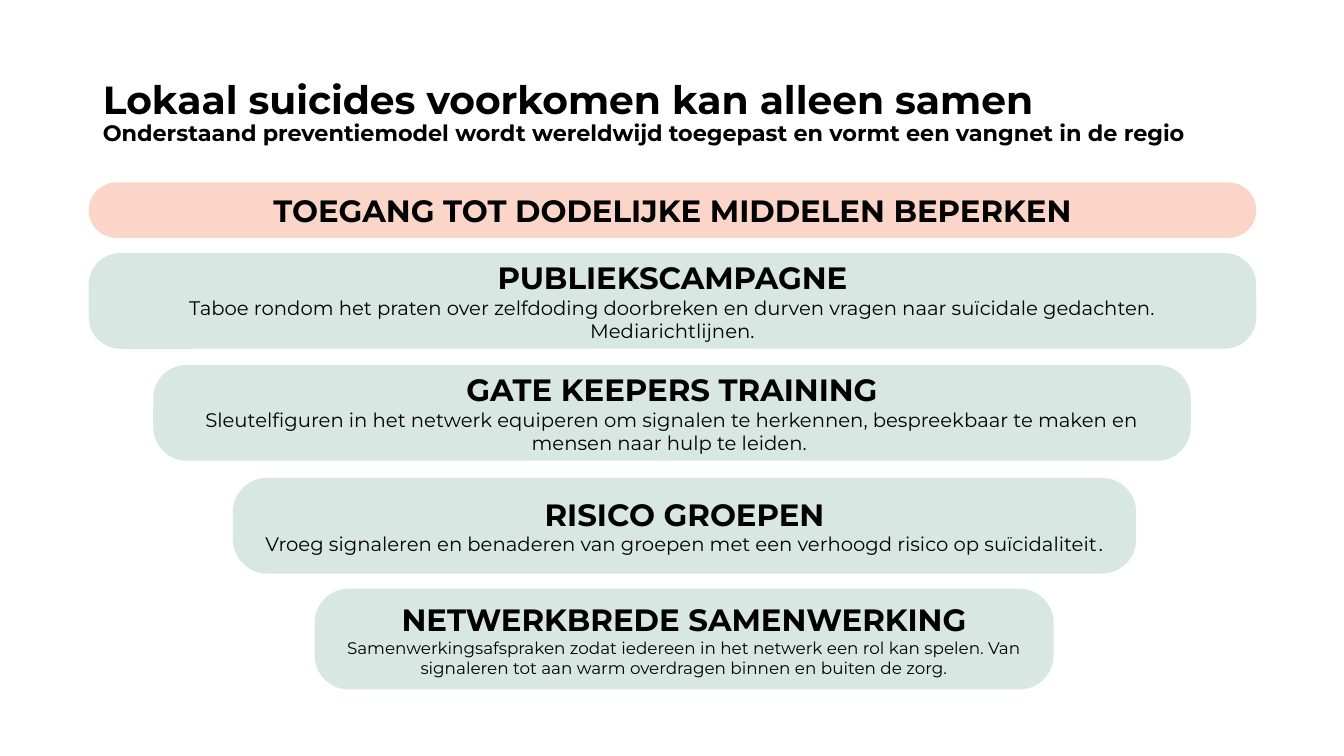
from pptx import Presentation
from pptx.dml.color import RGBColor
from pptx.enum.shapes import MSO_SHAPE
from pptx.enum.text import MSO_ANCHOR, MSO_AUTO_SIZE, PP_ALIGN
from pptx.util import Inches, Pt

BLACK = RGBColor(0x00, 0x00, 0x00)
GREEN = RGBColor(0xD9, 0xE7, 0xE3)
PINK = RGBColor(0xFB, 0xD5, 0xC8)
FONT = "Montserrat"
ROUNDED = MSO_SHAPE.ROUNDED_RECTANGLE
MIDDLE = MSO_ANCHOR.MIDDLE
CENTER, LEFT = PP_ALIGN.CENTER, PP_ALIGN.LEFT
TITLE_ONLY = 5


def format_paragraph(paragraph, size, bold, alignment):
    paragraph.alignment = alignment
    paragraph.font.name = FONT
    paragraph.font.size = Pt(size)
    paragraph.font.bold = bold
    paragraph.font.color.rgb = BLACK


presentation = Presentation()
presentation.slide_width = Inches(13.33)
presentation.slide_height = Inches(7.5)
slide = presentation.slides.add_slide(presentation.slide_layouts[TITLE_ONLY])

title = slide.shapes.title
title.left, title.top = Inches(0.92), Inches(0.4)
title.width, title.height = Inches(11.5), Inches(1.45)
title.text_frame.word_wrap = True
title.text_frame.auto_size = MSO_AUTO_SIZE.NONE
title.text_frame.vertical_anchor = MIDDLE
heading = title.text_frame.paragraphs[0]
heading.line_spacing = 0.9
format_paragraph(heading, 28, True, LEFT)
heading.add_run().text = "Lokaal suicides voorkomen kan alleen samen"
heading.add_line_break()
subtitle = heading.add_run()
subtitle.text = "Onderstaand preventiemodel wordt wereldwijd toegepast en vormt een vangnet in de regio"
subtitle.font.size = Pt(16)

# left, top, width, height, corner, fill, heading, description, description size
layers = [
    (0.88, 1.81, 11.58, 0.55, 0.5, PINK,
     "TOEGANG TOT DODELIJKE MIDDELEN BEPERKEN", None, None),
    (0.88, 2.51, 11.58, 0.95, 0.33, GREEN, "PUBLIEKSCAMPAGNE",
     "Taboe rondom het praten over zelfdoding doorbreken en durven vragen naar "
     "suïcidale gedachten. Mediarichtlijnen.", 14),
    (1.52, 3.62, 10.29, 0.95, 0.35, GREEN, "GATE KEEPERS TRAINING",
     "Sleutelfiguren in het netwerk equiperen om signalen te herkennen, "
     "bespreekbaar te maken en mensen naar hulp te leiden. ", 14),
    (2.31, 4.74, 8.96, 0.95, 0.36, GREEN, "RISICO GROEPEN",
     "Vroeg signaleren en benaderen van groepen met een verhoogd risico op "
     "suïcidaliteit", 14),
    (3.12, 5.84, 7.33, 1, 0.34, GREEN, "NETWERKBREDE SAMENWERKING",
     "Samenwerkingsafspraken zodat iedereen in het netwerk een rol kan spelen. "
     "Van signaleren tot aan warm overdragen binnen en buiten de zorg.", 12),
]

for left, top, width, height, corner, fill, name, description, size in layers:
    layer = slide.shapes.add_shape(
        ROUNDED, Inches(left), Inches(top), Inches(width), Inches(height))
    layer.adjustments[0] = corner
    layer.shadow.inherit = False
    layer.fill.solid()
    layer.fill.fore_color.rgb = fill
    layer.line.fill.background()
    frame = layer.text_frame
    frame.word_wrap = True
    frame.vertical_anchor = MIDDLE
    paragraph = frame.paragraphs[0]
    paragraph.text = name
    format_paragraph(paragraph, 22, True, CENTER)
    if description:
        paragraph = frame.add_paragraph()
        paragraph.text = description
        format_paragraph(paragraph, size, False, CENTER)
        if name == "RISICO GROEPEN":
            full_stop = paragraph.add_run()
            full_stop.text = "."
            full_stop.font.name = "Arial"

presentation.save("out.pptx")
